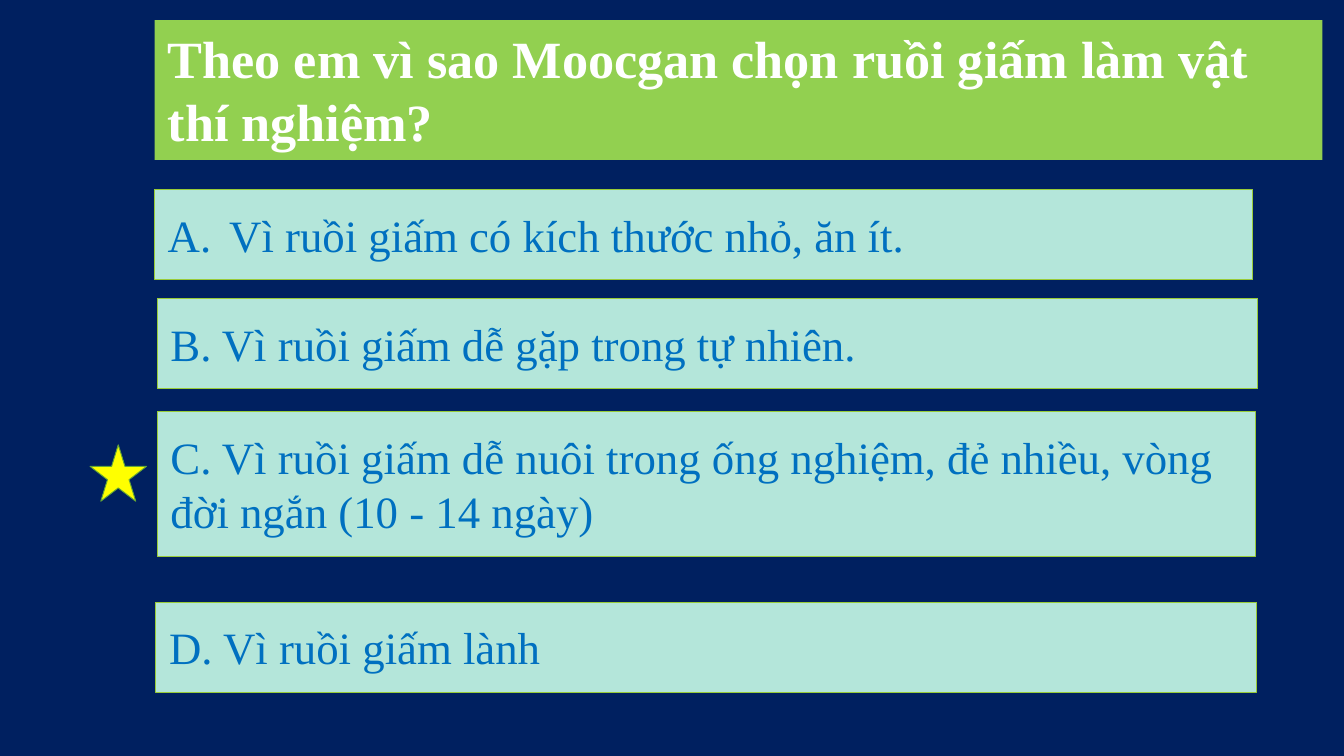
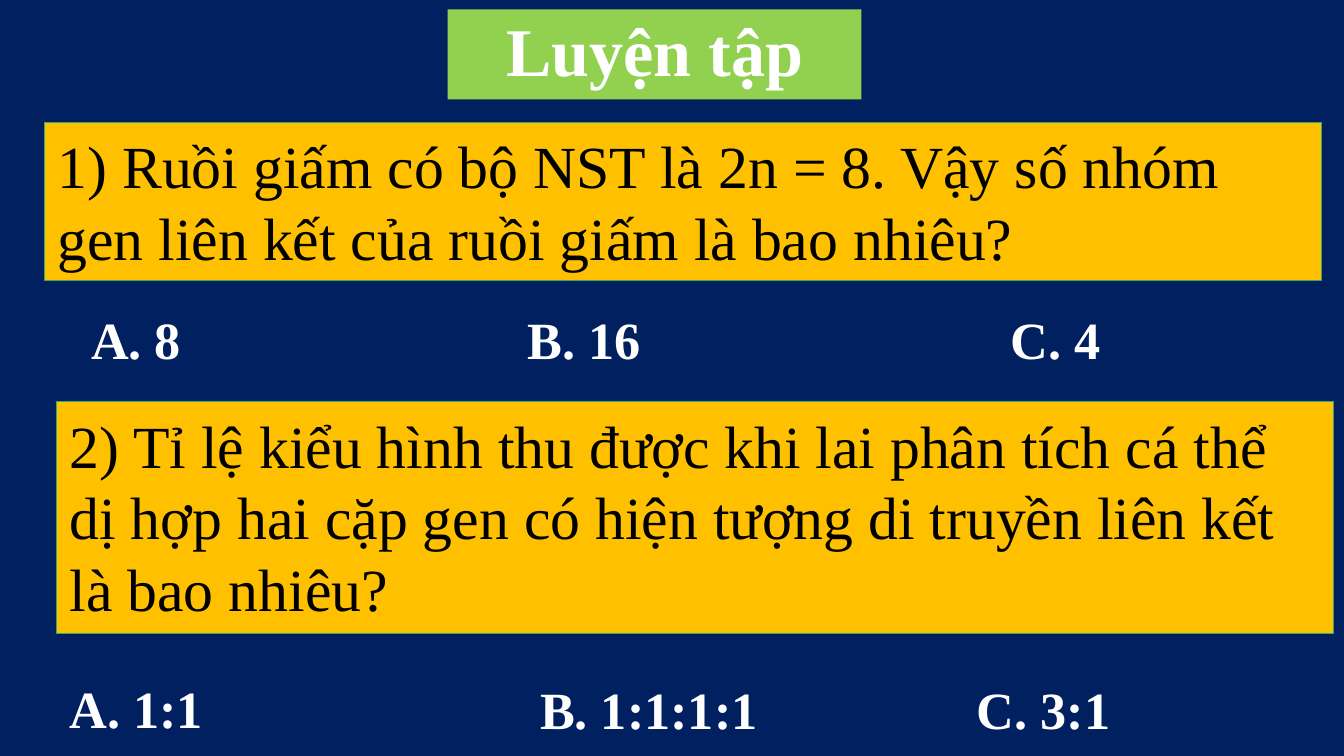
import pptx
import pptx.util
import pptx.dml.color
import pptx.enum.shapes
import pptx.enum.text
import pptx.oxml.ns
import lxml.etree

Inches = pptx.util.Inches
Pt = pptx.util.Pt
RGB = pptx.dml.color.RGBColor
SHAPE = pptx.enum.shapes.MSO_SHAPE
ALIGN = pptx.enum.text.PP_ALIGN
ANCHOR = pptx.enum.text.MSO_ANCHOR

FONT = "Times New Roman"
NAVY = RGB(0x00, 0x20, 0x60)
GREEN = RGB(0x92, 0xD0, 0x50)
MINT = RGB(0xB4, 0xE6, 0xDA)
LIME = RGB(0x99, 0xCB, 0x38)
BLUE = RGB(0x00, 0x70, 0xC0)
YELLOW = RGB(0xFF, 0xFF, 0x00)
LEAF = RGB(0x63, 0xA5, 0x37)
AMBER = RGB(0xFF, 0xC0, 0x00)
TEAL = RGB(0x37, 0xA7, 0x6F)
WHITE = RGB(0xFF, 0xFF, 0xFF)
BLACK = RGB(0x00, 0x00, 0x00)

QUESTION = ("Theo em vì sao Moocgan chọn ruồi giấm làm vật thí nghiệm?", (1.15, 0.15, 8.69, 1.04))
CHOICES = [
    (" Vì ruồi giấm có kích thước nhỏ, ăn ít.", (1.15, 1.41, 8.17, 0.67), True),
    ("B. Vì ruồi giấm dễ gặp trong tự nhiên.", (1.17, 2.22, 8.19, 0.67), False),
    ("C. Vì ruồi giấm dễ nuôi trong ống nghiệm, đẻ nhiều, vòng đời ngắn (10 - 14 ngày)",
     (1.17, 3.06, 8.17, 1.08), False),
    ("D. Vì ruồi giấm lành", (1.16, 4.48, 8.19, 0.67), False),
]
STAR = (0.67, 3.31, 0.42, 0.42)

HEADING = ("Luyện tập", (3.33, 0.07, 3.08, 0.67))
EXERCISES = [
    ("1) Ruồi giấm có bộ NST là 2n = 8. Vậy số nhóm gen liên kết của ruồi giấm là bao nhiêu?",
     (0.33, 0.91, 9.5, 1.18),
     [("A. 8", (0.58, 2.24, 0.92, 0.57)),
      ("B. 16", (3.83, 2.24, 1.42, 0.57)),
      ("C. 4", (7.42, 2.24, 0.92, 0.57))]),
    ("2) Tỉ lệ kiểu hình thu được khi lai phân tích cá thể dị hợp hai cặp gen "
     "có hiện tượng di truyền liên kết là bao nhiêu?",
     (0.42, 2.99, 9.5, 1.72),
     [("A. 1:1", (0.42, 4.98, 1.42, 0.57)),
      ("B. 1:1:1:1", (3.92, 4.99, 1.92, 0.57)),
      ("C. 3:1", (7.17, 4.99, 2.67, 0.57))]),
]


def add_slide(prs):
    s = prs.slides.add_slide(prs.slide_layouts[6])
    s.background.fill.solid()
    s.background.fill.fore_color.rgb = NAVY
    return s


def add_box(s, at, fill, line=None, kind=SHAPE.RECTANGLE):
    sp = s.shapes.add_shape(kind, *map(Inches, at))
    sp.shadow.inherit = False
    sp.fill.solid()
    sp.fill.fore_color.rgb = fill
    if line is None:
        sp.line.fill.background()
    else:
        sp.line.color.rgb = line
        sp.line.width = Pt(0.5)
    return sp


def set_text(sp, text, size, color=WHITE, bold=False, align=ALIGN.LEFT,
             anchor=ANCHOR.TOP, spacing=None, lettered=False):
    tf = sp.text_frame
    tf.word_wrap = True
    tf.vertical_anchor = anchor
    p = tf.paragraphs[0]
    p.alignment = align
    if spacing:
        p.line_spacing = spacing
    r = p.add_run()
    r.text = text
    r.font.name = FONT
    r.font.size = Pt(size)
    r.font.bold = bold
    r.font.color.rgb = color
    if lettered:
        pPr = p._p.get_or_add_pPr()
        pPr.set("marL", str(Inches(0.38)))
        pPr.set("indent", str(-Inches(0.38)))
        lettering = lxml.etree.SubElement(pPr, pptx.oxml.ns.qn("a:buAutoNum"))
        lettering.set("type", "alphaUcPeriod")


def build_question(prs):
    s = add_slide(prs)
    text, at = QUESTION
    set_text(add_box(s, at, GREEN), text, 28, bold=True)
    for text, at, lettered in CHOICES:
        set_text(add_box(s, at, MINT, LIME), text, 24, color=BLUE,
                 anchor=ANCHOR.MIDDLE, lettered=lettered)
    add_box(s, STAR, YELLOW, LEAF, SHAPE.STAR_5_POINT)


def build_practice(prs):
    s = add_slide(prs)
    text, at = HEADING
    set_text(add_box(s, at, GREEN), text, 36.5, bold=True, align=ALIGN.CENTER,
             anchor=ANCHOR.MIDDLE, spacing=0.9)
    for text, at, answers in EXERCISES:
        set_text(add_box(s, at, AMBER, TEAL), text, 32, color=BLACK)
        for answer, place in answers:
            set_text(s.shapes.add_textbox(*map(Inches, place)), answer, 28, bold=True)


def main():
    prs = pptx.Presentation()
    prs.slide_width = Inches(10)
    prs.slide_height = prs.slide_width * 9 // 16
    build_question(prs)
    build_practice(prs)
    prs.save("out.pptx")


if __name__ == "__main__":
    main()
